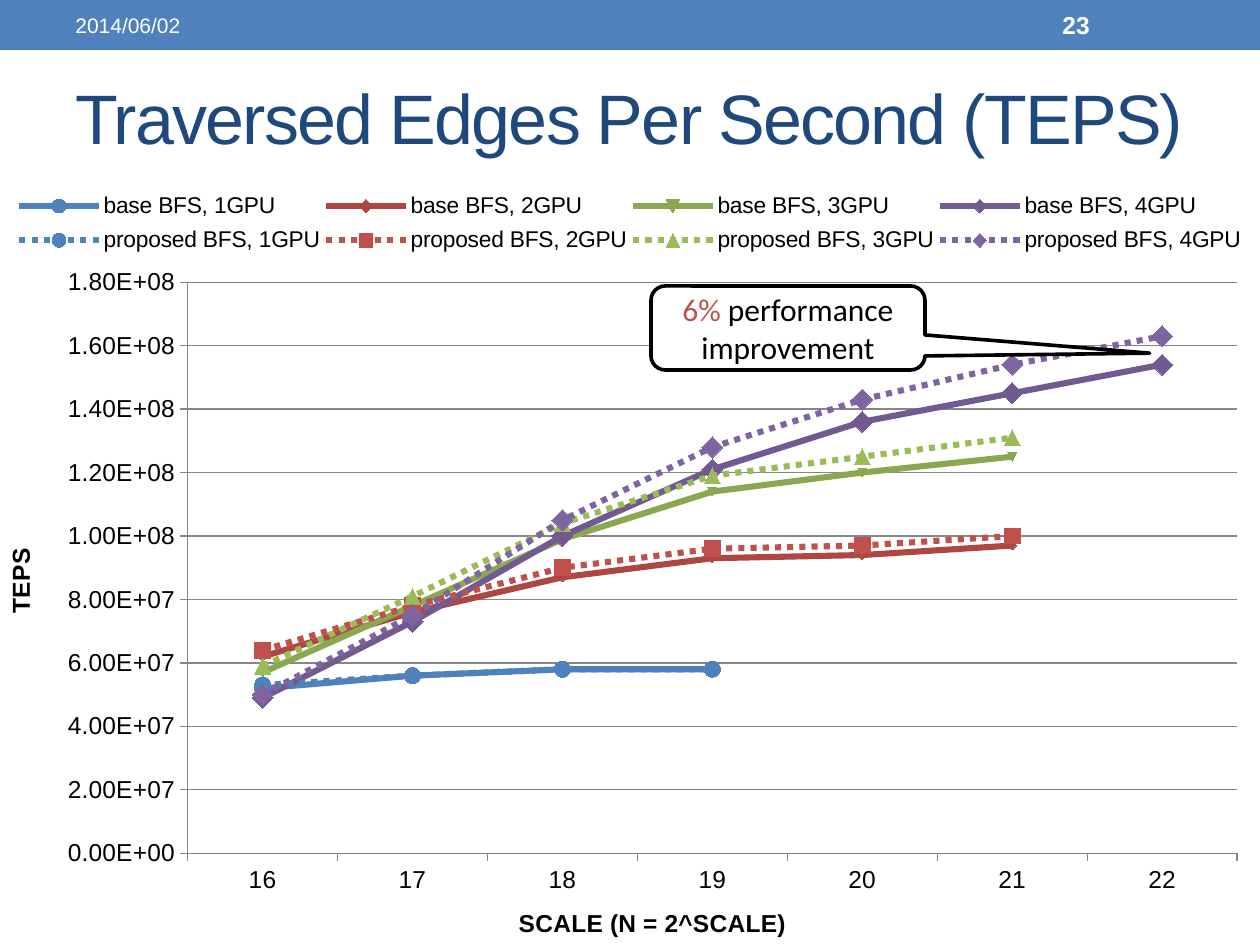
from dataclasses import dataclass

from lxml import etree
from pptx import Presentation
from pptx.chart.data import CategoryChartData
from pptx.dml.color import RGBColor
from pptx.enum.chart import XL_CHART_TYPE as ChartType
from pptx.enum.chart import XL_LEGEND_POSITION as LegendPosition
from pptx.enum.chart import XL_MARKER_STYLE as Marker
from pptx.enum.chart import XL_TICK_MARK as TickMark
from pptx.enum.dml import MSO_LINE as Dash
from pptx.enum.shapes import MSO_SHAPE as Shape
from pptx.enum.text import MSO_ANCHOR as Anchor
from pptx.enum.text import PP_ALIGN as Align
from pptx.oxml.ns import qn
from pptx.util import Pt

TITLE = "Traversed Edges Per Second (TEPS)"
DATE = "2014/06/02"
PAGE = "23"
CALLOUT = [("6% ", "C0504D"), ("performance improvement", "000000")]
SCALES = ["16", "17", "18", "19", "20", "21", "22"]
X_TITLE = "SCALE (N = 2^SCALE)"
Y_TITLE = "TEPS"

# name, millions of TEPS, line colour, marker, marker size, marker colour
BASE = [
    ("base BFS, 1GPU", [52, 56, 58, 58],
     "4F81BD", Marker.CIRCLE, 9, "4F81BD"),
    ("base BFS, 2GPU", [62, 76, 87, 93, 94, 97],
     "AD4744", Marker.AUTOMATIC, 5, "AD4744"),
    ("base BFS, 3GPU", [57, 78, 99, 114, 120, 125],
     "8BA74F", Marker.AUTOMATIC, 5, "8BA74F"),
    ("base BFS, 4GPU", [49, 73, 100, 121, 136, 145, 154],
     "725990", Marker.DIAMOND, 12, "8064A2"),
]
PROPOSED = [
    ("proposed BFS, 1GPU", [53, 56, 58, 58],
     "4F81BD", Marker.CIRCLE, 9, "4F81BD"),
    ("proposed BFS, 2GPU", [64, 78, 90, 96, 97, 100],
     "C0504D", Marker.SQUARE, 9, "C0504D"),
    ("proposed BFS, 3GPU", [59, 81, 104, 119, 125, 131],
     "9BBB59", Marker.TRIANGLE, 9, "9BBB59"),
    ("proposed BFS, 4GPU", [50, 75, 105, 128, 143, 154, 163],
     "8064A2", Marker.DIAMOND, 12, "8064A2"),
]
# left, top, width, height as fractions of the chart
PLOT_AREA = (0.149, 0.146, 0.833, 0.736)
LEGEND_AREA = (0.01, 0.02, 0.98, 0.1)


@dataclass(frozen=True)
class Theme:
    bar: str = "4F81BD"
    title: str = "1F497D"
    light: str = "FFFFFF"
    dark: str = "000000"
    grid: str = "868686"
    font: str = "Arial"
    callout_font: str = "Calibri"
    title_size: int = 40
    callout_size: int = 18
    axis_size: int = 14
    legend_size: int = 13
    date_size: int = 12
    page_size: int = 14
    series_width: float = 3.5


THEME = Theme()
EMU_PER_PX = 914400 / 126


def px(*lengths):
    return [round(length * EMU_PER_PX) for length in lengths]


def rgb(color):
    return RGBColor.from_string(color)


def style(font, size, color, name=THEME.font, bold=False):
    font.size = Pt(size)
    font.color.rgb = rgb(color)
    font.name = name
    font.bold = bold


def add_label(slide, text, box, size, color, bold=False):
    frame = slide.shapes.add_textbox(*px(*box)).text_frame
    frame.word_wrap = False
    frame.vertical_anchor = Anchor.MIDDLE
    paragraph = frame.paragraphs[0]
    paragraph.text = text
    paragraph.alignment = Align.LEFT
    style(paragraph.font, size, color, bold=bold)
    return paragraph


def add_header(slide):
    bar = slide.shapes.add_shape(Shape.RECTANGLE, *px(0, 0, 1260, 50))
    bar.shadow.inherit = False
    bar.fill.solid()
    bar.fill.fore_color.rgb = rgb(THEME.bar)
    bar.line.fill.background()
    title = add_label(slide, TITLE, (63, 48, 1134, 136),
                      THEME.title_size, THEME.title)
    title.runs[0]._r.get_or_add_rPr().set("spc", "-100")
    add_label(slide, DATE, (63, 3, 399, 45), THEME.date_size, THEME.light)
    add_label(slide, PAGE, (1050, 2, 147, 45), THEME.page_size, THEME.light, True)


def pin(part, index, area, target=None):
    """Give a chart part a manual layout, as its child at the given index."""
    for old in part.findall(qn("c:layout")):
        part.remove(old)
    layout = etree.Element(qn("c:layout"))
    part.insert(index, layout)
    manual = etree.SubElement(layout, qn("c:manualLayout"))
    settings = {"layoutTarget": target} if target else {}
    settings.update(xMode="edge", yMode="edge", **dict(zip("xywh", area)))
    for tag, value in settings.items():
        etree.SubElement(manual, qn(f"c:{tag}")).set("val", str(value))


def style_axis(axis, title):
    axis.major_tick_mark = TickMark.OUTSIDE
    axis.minor_tick_mark = TickMark.NONE
    axis.format.line.color.rgb = rgb(THEME.grid)
    style(axis.tick_labels.font, THEME.axis_size, THEME.dark)
    paragraph = axis.axis_title.text_frame.paragraphs[0]
    paragraph.text = title
    style(paragraph.font, THEME.axis_size, THEME.dark, bold=True)


def add_teps_chart(slide):
    rows = BASE + PROPOSED
    data = CategoryChartData(number_format="0.00E+00")
    data.categories = SCALES
    for name, millions, *_ in rows:
        gaps = [None] * (len(SCALES) - len(millions))
        data.add_series(name, [value * 1_000_000 for value in millions] + gaps)
    chart = slide.shapes.add_chart(
        ChartType.LINE_MARKERS, *px(0, 169, 1260, 776), data).chart
    chart.has_title = False
    style(chart.font, THEME.legend_size, THEME.dark)

    chart.has_legend = True
    chart.legend.position = LegendPosition.TOP
    chart.legend.include_in_layout = False
    style(chart.legend.font, THEME.legend_size, THEME.dark)

    style_axis(chart.category_axis, X_TITLE)
    teps_axis = chart.value_axis
    style_axis(teps_axis, Y_TITLE)
    teps_axis.minimum_scale, teps_axis.maximum_scale = 0, 180_000_000
    teps_axis.major_unit = 20_000_000
    teps_axis.major_gridlines.format.line.color.rgb = rgb(THEME.grid)
    teps_axis.tick_labels.number_format = "0.00E+00"
    teps_axis.tick_labels.number_format_is_linked = False

    plot = chart.plots[0]
    plot.vary_by_categories = False
    for series, row in zip(plot.series, rows):
        _, _, line_color, marker, marker_size, marker_color = row
        series.smooth = False
        series.format.line.color.rgb = rgb(line_color)
        series.format.line.width = Pt(THEME.series_width)
        if row in PROPOSED:
            series.format.line.dash_style = Dash.ROUND_DOT
        series.marker.style = marker
        series.marker.size = marker_size
        series.marker.format.fill.solid()
        series.marker.format.fill.fore_color.rgb = rgb(marker_color)
        series.marker.format.line.color.rgb = rgb(marker_color)
    chart_xml = chart._chartSpace.chart
    pin(chart_xml.plotArea, 0, PLOT_AREA, "inner")
    pin(chart_xml.find(qn("c:legend")), 1, LEGEND_AREA)


def add_callout(slide):
    callout = slide.shapes.add_shape(
        Shape.ROUNDED_RECTANGULAR_CALLOUT, *px(651, 286, 274, 84))
    for index, value in enumerate((1.32, 0.3, 0.17)):
        callout.adjustments[index] = value
    callout.shadow.inherit = False
    callout.fill.solid()
    callout.fill.fore_color.rgb = rgb(THEME.light)
    callout.line.color.rgb = rgb(THEME.dark)
    callout.line.width = Pt(2.08)
    callout.text_frame.word_wrap = True
    callout.text_frame.vertical_anchor = Anchor.MIDDLE
    paragraph = callout.text_frame.paragraphs[0]
    paragraph.alignment = Align.CENTER
    for text, color in CALLOUT:
        run = paragraph.add_run()
        run.text = text
        style(run.font, THEME.callout_size, color, THEME.callout_font)


def main():
    deck = Presentation()
    deck.slide_width, deck.slide_height = px(1260, 945)
    slide = deck.slides.add_slide(deck.slide_layouts[6])
    add_header(slide)
    add_teps_chart(slide)
    add_callout(slide)
    deck.save("out.pptx")


if __name__ == "__main__":
    main()
